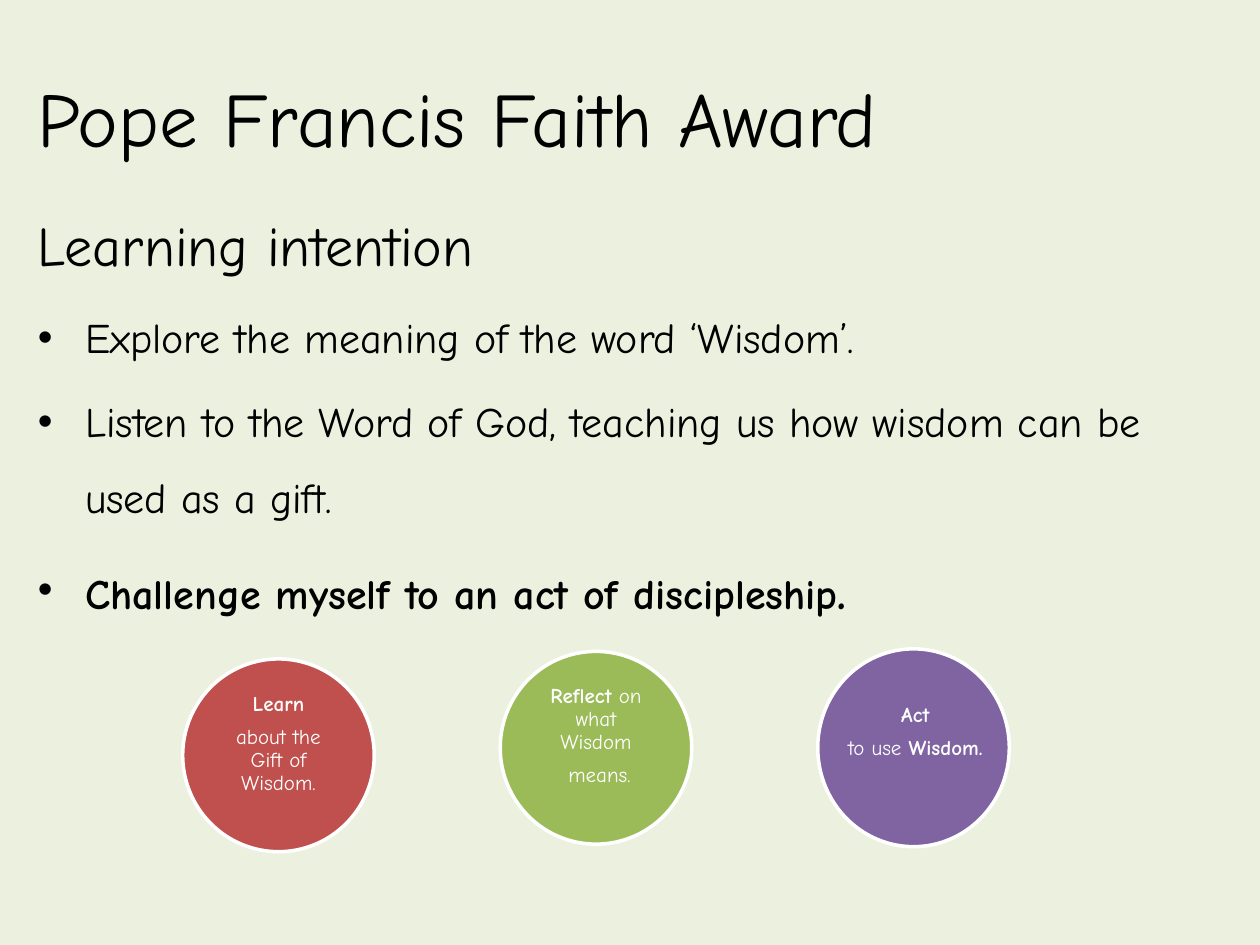
from lxml import etree
from pptx import Presentation
from pptx import util as u
from pptx.dml.color import RGBColor
from pptx.enum import shapes, text
from pptx.oxml.ns import qn

CREAM = RGBColor(0xEB, 0xF1, 0xDE)
BLACK = RGBColor(0, 0, 0)
WHITE = RGBColor(0xFF, 0xFF, 0xFF)
RED = RGBColor(0xC0, 0x50, 0x4D)
GREEN = RGBColor(0x9B, 0xBB, 0x59)
PURPLE = RGBColor(0x80, 0x64, 0xA2)

CIRCLE_LEFT, CIRCLE_STEP, CIRCLE_WIDTH = 1.45, 2.52, 1.52


class SlideBuilder:
    font_name = "Comic Neue"

    def __init__(self, prs):
        self.slide = prs.slides.add_slide(prs.slide_layouts[1])
        self.slide.background.fill.solid()
        self.slide.background.fill.fore_color.rgb = CREAM

    def place(self, element, left, top, width, height):
        element.left, element.top = u.Inches(left), u.Inches(top)
        element.width, element.height = u.Inches(width), u.Inches(height)

    def style(self, paragraph, size, color):
        paragraph.font.name = self.font_name
        paragraph.font.size = u.Pt(size)
        paragraph.font.color.rgb = color

    def paragraphs(self, frame, count):
        return [frame.paragraphs[0]] + [frame.add_paragraph() for _ in range(count - 1)]

    def add_runs(self, paragraph, runs):
        for words, bold in runs:
            run = paragraph.add_run()
            run.text = words
            run.font.bold = bold

    def title(self, words, box):
        title = self.slide.shapes.title
        self.place(title, *box)
        frame = title.text_frame
        frame.text = words
        frame.vertical_anchor = text.MSO_ANCHOR.MIDDLE
        frame.paragraphs[0].alignment = text.PP_ALIGN.LEFT
        self.style(frame.paragraphs[0], 44, BLACK)

    def body(self, heading, bullets, box):
        """Fill the body with an unbulleted heading and the template's bullets."""
        body = self.slide.placeholders[1]
        self.place(body, *box)
        frame = body.text_frame
        frame.auto_size = text.MSO_AUTO_SIZE.NONE
        intro, *items = self.paragraphs(frame, len(bullets) + 1)
        intro.text = heading
        properties = intro._p.get_or_add_pPr()
        properties.set("marL", "0")
        properties.set("indent", "0")
        etree.SubElement(properties, qn("a:buNone"))
        intro.space_before = u.Pt(0)
        self.style(intro, 32, BLACK)
        for item, runs in zip(items, bullets):
            self.add_runs(item, runs)
            item.line_spacing = 1.5
            item.space_before = u.Pt(5)
            self.style(item, 24, BLACK)
        return items

    def circle(self, left, top, height, color):
        circle = self.slide.shapes.add_shape(
            shapes.MSO_SHAPE.OVAL, u.Inches(left), u.Inches(top),
            u.Inches(CIRCLE_WIDTH), u.Inches(height))
        circle.shadow.inherit = False
        circle.fill.solid()
        circle.fill.fore_color.rgb = color
        circle.line.color.rgb = WHITE
        circle.line.width = u.Pt(2)
        return circle

    def label(self, frame, lines, anchor):
        frame.word_wrap = True
        frame.vertical_anchor = anchor
        for index, (line, runs) in enumerate(zip(self.paragraphs(frame, len(lines)), lines)):
            self.add_runs(line, runs)
            line.alignment = text.PP_ALIGN.CENTER
            line.line_spacing = 0.9
            line.space_after = u.Pt(4.2 if index else 6)
            self.style(line, 12, WHITE)

    def caption(self, lines, box):
        """Label in its own box, raised above the middle by a deep bottom margin."""
        caption = self.slide.shapes.add_textbox(*map(u.Inches, box))
        frame = caption.text_frame
        frame.margin_left = frame.margin_right = frame.margin_top = u.Inches(0.06)
        frame.margin_bottom = u.Inches(0.44)
        self.label(frame, lines, text.MSO_ANCHOR.MIDDLE)


def main():
    prs = Presentation()
    prs.slide_width, prs.slide_height = u.Inches(10), u.Inches(7.5)
    builder = SlideBuilder(prs)

    builder.title("Pope Francis Faith Award", (0.2, 0.3, 9, 1.25))
    items = builder.body("Learning intention", [
        [("Explore the meaning of the word ‘Wisdom’.", None)],
        [("Listen to the Word of God, teaching us how wisdom can be used as a gift.", None)],
        [("Challenge myself to an act of discipleship", True), (".", True)],
    ], (0.2, 1.62, 9.61, 4.95))
    items[-1].runs[-1].font.size = u.Pt(28)

    learn = [[("Learn", True)], [("about the Gift of Wisdom.", False)]]
    reflect = [[("Reflect", True), (" on what Wisdom", False)], [(" means.", False)]]
    act = [[("Act", True)], [("to use ", False), ("Wisdom.", True)]]

    steps = [(5.23, 1.53, RED, learn), (5.17, 1.53, GREEN, reflect), (5.15, 1.57, PURPLE, None)]
    for index, (top, height, color, lines) in enumerate(steps):
        circle = builder.circle(CIRCLE_LEFT + index * CIRCLE_STEP, top, height, color)
        if lines:
            builder.label(circle.text_frame, lines, text.MSO_ANCHOR.TOP)
    builder.caption(act, (6.49, 5.43, 1.55, 1.14))

    prs.save("out.pptx")


if __name__ == "__main__":
    main()
